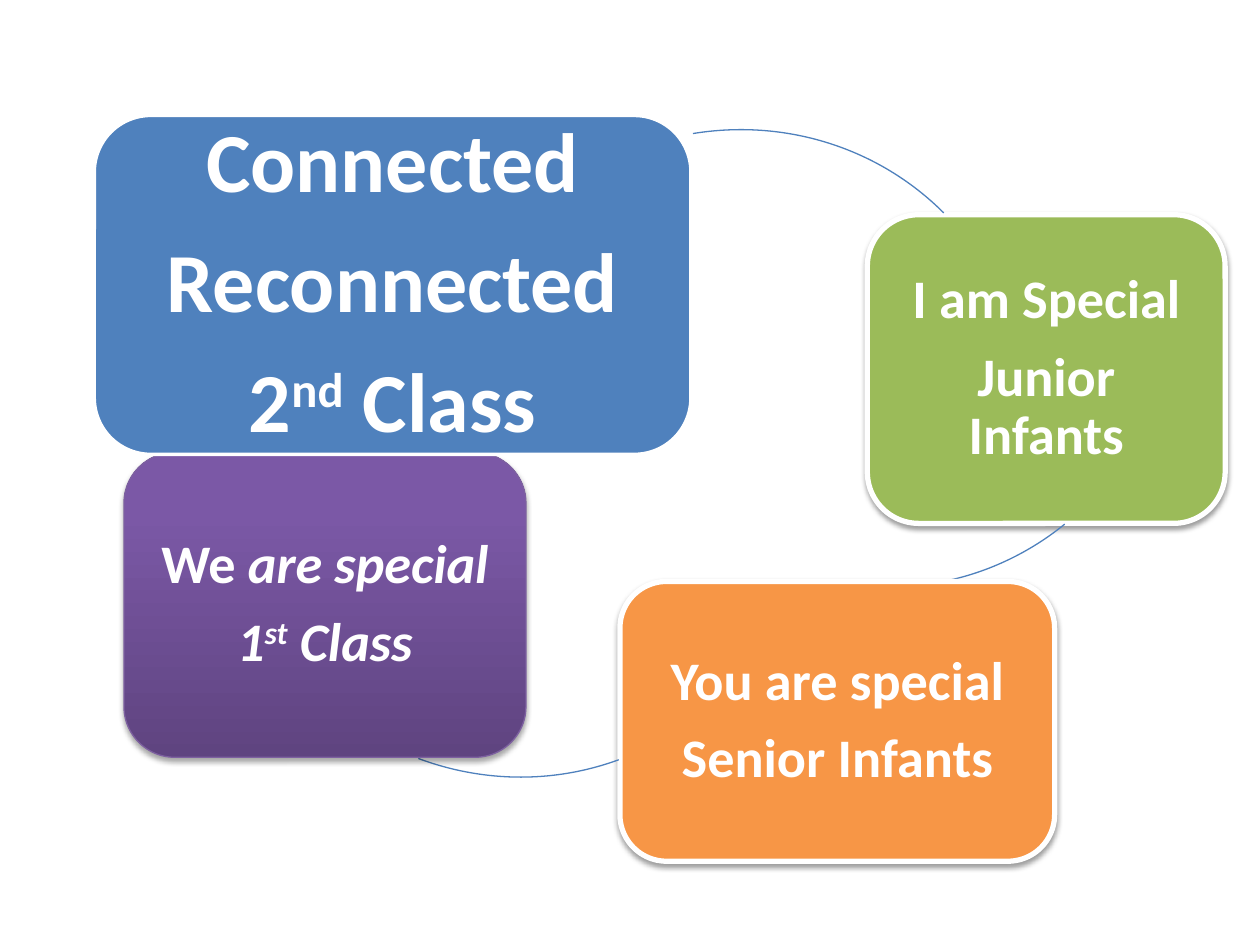
from copy import deepcopy
from dataclasses import dataclass

from lxml import etree
from pptx import Presentation
from pptx.dml.color import RGBColor
from pptx.enum.shapes import MSO_SHAPE
from pptx.enum.text import MSO_ANCHOR, PP_ALIGN
from pptx.oxml.ns import qn
from pptx.util import Inches, Pt

ROUNDED = MSO_SHAPE.ROUNDED_RECTANGLE
MIDDLE = MSO_ANCHOR.MIDDLE
CENTER = PP_ALIGN.CENTER
COLS, ROWS = 100, 75
CELL = Inches(10) // COLS
RING = 45.9


@dataclass(frozen=True)
class Theme:
    font: str = "Calibri"
    heading: int = 48
    body: int = 31
    line_spacing: float = 0.9
    gap: float = 0.35
    white: str = "FFFFFF"
    shadow: str = "000000"
    blue: str = "4F81BD"
    green: str = "9BBB59"
    orange: str = "F79646"
    purple_edge: str = "7D60A0"
    purple: tuple = ((0, "5F4480"), (0.8, "7B58A6"), (1, "7C57A8"))


THEME = Theme()


def rgb(color):
    return RGBColor.from_string(color)


def cells(*values):
    return [round(v * CELL) for v in values]


def paint(sp, fill):
    if isinstance(fill, str):
        sp.fill.solid()
        sp.fill.fore_color.rgb = rgb(fill)
        return
    sp.fill.gradient()
    sp.fill.gradient_angle = 90
    stops = next(sp._element.spPr.iter(qn("a:gsLst")))
    while len(stops) < len(fill):
        stops.append(deepcopy(stops[0]))
    for stop, (position, color) in zip(sp.fill.gradient_stops, fill):
        stop.position = position
        stop.color.rgb = rgb(color)


def add_shadow(sp, opacity):
    effects = sp._element.spPr.find(qn("a:effectLst"))
    outer = etree.SubElement(
        effects, qn("a:outerShdw"), blurRad=str(Pt(3.1)), dist=str(Pt(1.7)),
        dir="5400000", algn="ctr", rotWithShape="0")
    color = etree.SubElement(outer, qn("a:srgbClr"), val=THEME.shadow)
    etree.SubElement(color, qn("a:alpha"), val=str(opacity * 1000))


def add_text(sp, lines, size, inset):
    tf = sp.text_frame
    tf.word_wrap = True
    tf.vertical_anchor = MIDDLE
    tf.margin_left = tf.margin_right = Inches(inset)
    tf.margin_top = tf.margin_bottom = Inches(inset)
    for i, runs in enumerate(lines):
        p = tf.paragraphs[0] if i == 0 else tf.add_paragraph()
        p.alignment = CENTER
        p.line_spacing = THEME.line_spacing
        p.space_after = Pt(size * THEME.gap)
        for text, style in runs:
            r = p.add_run()
            r.text = text
            r.font.name = THEME.font
            r.font.size = Pt(size)
            r.font.bold = True
            r.font.color.rgb = rgb(THEME.white)
            if "italic" in style:
                r.font.italic = True
            if "raised" in style:
                r.font._element.set("baseline", "30000")


def add_card(s, box, fill, lines, edge=THEME.white, weight=3,
             size=THEME.body, inset=0.13, opacity=38):
    sp = s.shapes.add_shape(ROUNDED, *cells(*box))
    sp.shadow.inherit = False
    paint(sp, fill)
    sp.line.color.rgb = rgb(edge)
    sp.line.width = Pt(weight)
    if opacity:
        add_shadow(sp, opacity)
    add_text(sp, lines, size, inset)


def add_arc(s, corner, *points):
    start, *curve = [cells(x - corner[0], y - corner[1]) for x, y in points]
    builder = s.shapes.build_freeform(*start)
    builder.add_line_segments([curve[-1]], close=False)
    sp = builder.convert_to_shape()
    sp.left, sp.top, sp.width, sp.height = cells(*corner, RING, RING)
    outline = next(sp._element.spPr.iter(qn("a:path")))
    outline.clear()
    for side in ("w", "h"):
        outline.set(side, str(sp.width))
    for tag, stops in (("a:moveTo", [start]), ("a:cubicBezTo", curve)):
        step = etree.SubElement(outline, qn(tag))
        for x, y in stops:
            etree.SubElement(step, qn("a:pt"), x=str(x), y=str(y))
    sp.shadow.inherit = False
    sp.fill.background()
    sp.line.color.rgb = rgb(THEME.blue)
    sp.line.width = Pt(0.75)


def main():
    prs = Presentation()
    prs.slide_width, prs.slide_height = COLS * CELL, ROWS * CELL
    s = prs.slides.add_slide(prs.slide_layouts[6])

    add_card(s, (68.84, 17.04, 28.4, 24.5), THEME.green,
             [[("I am Special", "")], [("Junior Infants", "")]])
    add_arc(s, (47.2, 0.8), (84.5, 41.6), (81.8, 43.8), (78.5, 45.4), (75.1, 46.1))
    add_card(s, (49.2, 46.15, 34.5, 22.2), THEME.orange,
             [[("You are special", "")], [("Senior Infants", "")]])
    add_arc(s, (18.4, 15.8), (49.1, 60.3), (43.9, 62.2), (38.3, 62.1), (33.2, 60.2))
    add_card(s, (9.84, 35.9, 31.9, 24.2), THEME.purple,
             [[("We", ""), (" are special", "italic")],
              [("1", "italic"), ("st", "italic raised"), (" Class", "italic")]],
             edge=THEME.purple_edge, weight=0.75, opacity=35)
    add_card(s, (7.48, 9.16, 47.36, 26.9), THEME.blue,
             [[("Connected", "")], [("Reconnected", "")],
              [("2", ""), ("nd", "raised"), (" Class", "")]],
             weight=2, size=THEME.heading, inset=0.2, opacity=0)
    add_arc(s, (35.9, 10.3), (55, 10.6), (62.3, 9.4), (69.7, 11.7), (74.9, 16.9))
    prs.save("out.pptx")


if __name__ == "__main__":
    main()
